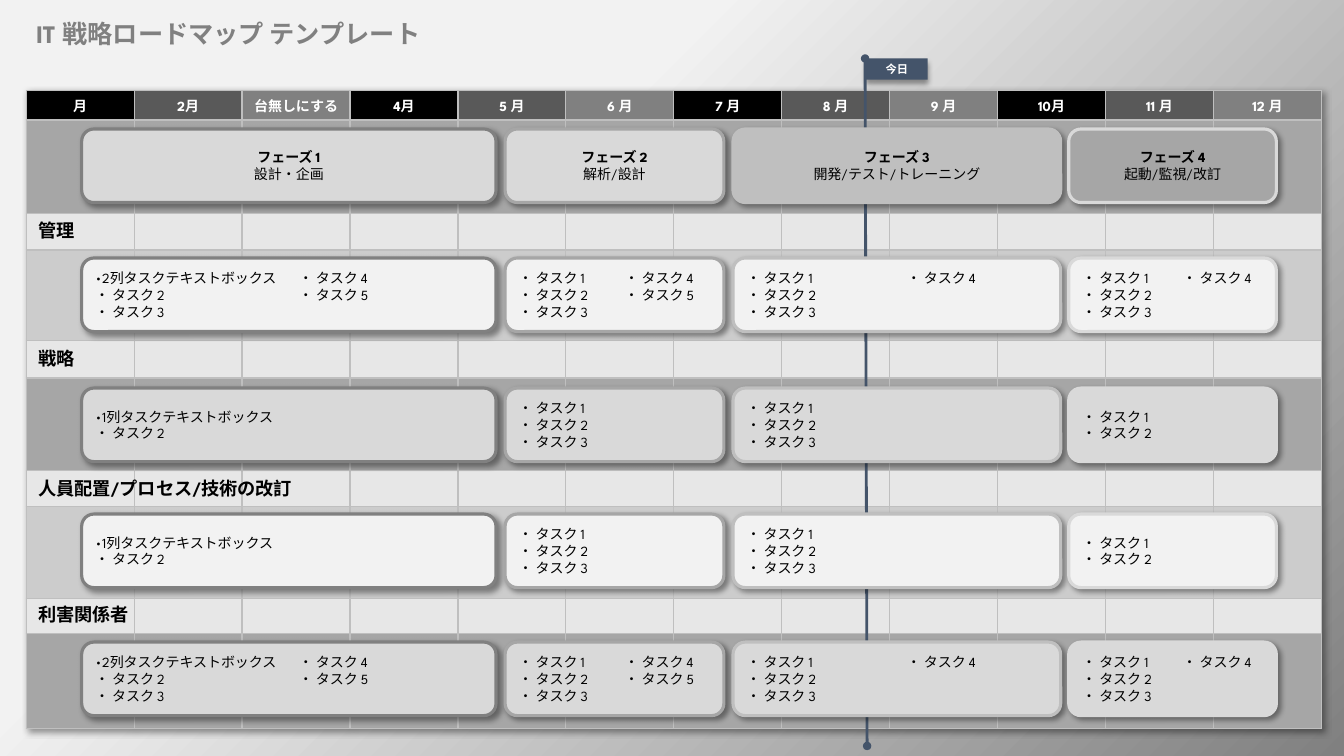
from lxml import etree
from pptx import Presentation
from pptx.dml.color import RGBColor
from pptx.enum.shapes import MSO_CONNECTOR, MSO_SHAPE
from pptx.enum.text import MSO_ANCHOR, MSO_AUTO_SIZE, PP_ALIGN
from pptx.oxml import parse_xml
from pptx.oxml.ns import nsdecls, qn
from pptx.util import Inches, Pt

BLACK = RGBColor(0x00, 0x00, 0x00)
WHITE = RGBColor(0xFF, 0xFF, 0xFF)
CHARCOAL = RGBColor(0x59, 0x59, 0x59)
GREY = RGBColor(0x80, 0x80, 0x80)
MID_GREY = RGBColor(0xA6, 0xA6, 0xA6)
SILVER = RGBColor(0xBF, 0xBF, 0xBF)
LIGHT_GREY = RGBColor(0xCC, 0xCC, 0xCC)
PALE_GREY = RGBColor(0xD9, 0xD9, 0xD9)
LABEL_GREY = RGBColor(0xE7, 0xE7, 0xE7)
NEAR_WHITE = RGBColor(0xF2, 0xF2, 0xF2)
SLATE = RGBColor(0x44, 0x54, 0x6A)

FONT = "League Spartan"
MONTHS = ["月", "2月", "台無しにする", "4月", "5 月", "6 月",
          "7 月", "8 月", "9 月", "10月", "11 月", "12 月"]
MONTH_FILLS = [BLACK, CHARCOAL, GREY]
ROW_HEIGHTS = [0.29, 0.93, 0.36, 0.9, 0.37, 0.92, 0.36, 0.91, 0.35, 0.94]
ROW_FILLS = [None, MID_GREY] + [LABEL_GREY, LIGHT_GREY, LABEL_GREY, MID_GREY] * 2

# Phase columns: left, width, outline, phase fill, heading, description
PHASES = [
    (0.81, 4.11, GREY, PALE_GREY, "フェーズ 1", "設計・企画"),
    (5.01, 2.17, MID_GREY, PALE_GREY, "フェーズ 2", "解析/設計"),
    (7.27, 3.25, SILVER, SILVER, "フェーズ 3", "開発/テスト/トレーニング"),
    (10.6, 2.06, PALE_GREY, MID_GREY, "フェーズ 4", "起動/監視/改訂"),
]
# Bands: label, label top, box top, box fill, text columns, tasks in each phase
BANDS = [
    ("管理", 2.13, 2.56, NEAR_WHITE, 2, [5, 5, 4, 4]),
    ("戦略", 3.4, 3.85, PALE_GREY, 1, [2, 3, 3, 2]),
    ("人員配置/プロセス/技術の改訂", 4.69, 5.1, NEAR_WHITE, 1, [2, 3, 3, 2]),
    ("利害関係者", 5.94, 6.37, PALE_GREY, 2, [5, 5, 4, 4]),
]


def shadow_xml(angle):
    return parse_xml(
        f'<a:effectLst {nsdecls("a")}><a:outerShdw blurRad="{Pt(4)}" dist="{Pt(3)}" '
        f'dir="{angle * 60000}" algn="tl" rotWithShape="0"><a:srgbClr val="000000">'
        '<a:alpha val="40000"/></a:srgbClr></a:outerShdw></a:effectLst>')


def write(tf, lines, align=PP_ALIGN.LEFT, **formats):
    """Write one paragraph per (text, bold) pair."""
    for i, (text, bold) in enumerate(lines):
        p = tf.paragraphs[0] if i == 0 else tf.add_paragraph()
        p.alignment = align
        r = p.add_run()
        r.text = text
        color = formats.get("color", BLACK)
        values = {"name": formats.get("name", FONT),
                  "size": Pt(formats.get("size", 10)), "bold": bold}
        for key, value in values.items():
            setattr(r.font, key, value)
        r.font.color.rgb = color


def add_box(s, kind, place, fill, outline=None, angle=45):
    sp = s.shapes.add_shape(kind, *map(Inches, place))
    sp.fill.solid()
    sp.fill.fore_color.rgb = fill
    if outline is None:
        sp.line.fill.background()
    else:
        sp.line.color.rgb = outline
        sp.line.width = Pt(2.25)
    sp._element.spPr.append(shadow_xml(angle))
    sp.text_frame.word_wrap = True
    sp.text_frame.vertical_anchor = MSO_ANCHOR.MIDDLE
    return sp


def add_title(s):
    title = s.shapes.title
    title.left, title.top, title.width, title.height = map(Inches, (0.26, 0.13, 4.19, 0.4))
    tf = title.text_frame
    tf.word_wrap = False
    tf.auto_size = MSO_AUTO_SIZE.SHAPE_TO_FIT_TEXT
    tf.vertical_anchor = MSO_ANCHOR.TOP
    write(tf, [("IT 戦略ロードマップ テンプレート", True)], size=18, color=GREY)


def format_cell(cell, fill):
    cell.margin_top = cell.margin_bottom = 0
    cell.vertical_anchor = MSO_ANCHOR.MIDDLE
    tcPr = cell._tc.get_or_add_tcPr()
    for side in ("lnL", "lnR", "lnT", "lnB"):
        tcPr.append(parse_xml(
            f'<a:{side} {nsdecls("a")} w="{Pt(1)}"><a:solidFill>'
            f'<a:srgbClr val="{SILVER}"/></a:solidFill></a:{side}>'))
    cell.fill.solid()
    cell.fill.fore_color.rgb = fill


def add_calendar(s):
    table = s.shapes.add_table(len(ROW_HEIGHTS), len(MONTHS), Inches(0.26), Inches(0.9),
                               Inches(12.85), Inches(sum(ROW_HEIGHTS))).table
    table._tbl.tblPr.insert(0, shadow_xml(45))
    for row, height, row_fill in zip(table.rows, ROW_HEIGHTS, ROW_FILLS):
        row.height = Inches(height)
        for i, cell in enumerate(row.cells):
            format_cell(cell, row_fill or MONTH_FILLS[i % 3])
    for cell, month in zip(table.rows[0].cells, MONTHS):
        write(cell.text_frame, [(month, True)], PP_ALIGN.CENTER, color=WHITE)


def add_today(s):
    flag = add_box(s, MSO_SHAPE.SNIP_1_RECTANGLE, (8.59, 0.58, 0.61, 0.21), SLATE, angle=90)
    flag.adjustments[0] = 0
    write(flag.text_frame, [("今日", True)], PP_ALIGN.CENTER,
          name="Arial", size=8, color=WHITE)
    line = s.shapes.add_connector(MSO_CONNECTOR.STRAIGHT,
                                  *map(Inches, (8.58, 0.58, 8.6, 7.4)))
    line.line.color.rgb = SLATE
    line.line.width = Pt(2)
    ln = line.line._get_or_add_ln()
    for end in ("a:headEnd", "a:tailEnd"):
        etree.SubElement(ln, qn(end), type="oval")
    etree.SubElement(line._element.spPr, qn("a:effectLst"))


def add_phases(s):
    for left, width, outline, fill, heading, description in PHASES:
        sp = add_box(s, MSO_SHAPE.ROUNDED_RECTANGLE, (left, 1.28, width, 0.73), fill, outline)
        write(sp.text_frame, [(heading, True), (description, False)], PP_ALIGN.CENTER)


def add_label(s, text, top):
    tf = s.shapes.add_textbox(*map(Inches, (0.28, top, 12.83, 0.32))).text_frame
    tf.word_wrap = True
    tf.auto_size = MSO_AUTO_SIZE.SHAPE_TO_FIT_TEXT
    write(tf, [(text, True)], size=13)
    tf.paragraphs[0].runs[0].font._element.insert(1, shadow_xml(45))


def add_band(s, label, label_top, top, fill, columns, counts):
    add_label(s, label, label_top)
    for i, (phase, count) in enumerate(zip(PHASES, counts)):
        left, width, outline = phase[:3]
        sp = add_box(s, MSO_SHAPE.ROUNDED_RECTANGLE, (left, top, width, 0.73), fill, outline)
        tasks = [f"• タスク {n}" for n in range(1, count + 1)]
        if i == 0:
            tasks[0] = f"•{columns}列タスクテキストボックス"
        write(sp.text_frame, [(task, False) for task in tasks])
        if columns > 1:
            bodyPr = sp.text_frame._txBody.bodyPr
            bodyPr.set("numCol", str(columns))
            bodyPr.set("spcCol", str(Inches(0.2)))


def main():
    prs = Presentation()
    prs.slide_width, prs.slide_height = Inches(13.33), Inches(7.5)
    s = prs.slides.add_slide(prs.slide_layouts[5])

    # Background gradient
    fill = s.background.fill
    fill.gradient()
    fill.gradient_angle = 315
    for stop, position, color in zip(fill.gradient_stops, (0.34, 1), (NEAR_WHITE, GREY)):
        stop.position = position
        stop.color.rgb = color

    # Title, calendar grid and today marker
    add_title(s)
    add_calendar(s)
    add_today(s)

    # Phases and the task bands below them
    add_phases(s)
    for band in BANDS:
        add_band(s, *band)

    prs.save("out.pptx")


if __name__ == "__main__":
    main()
